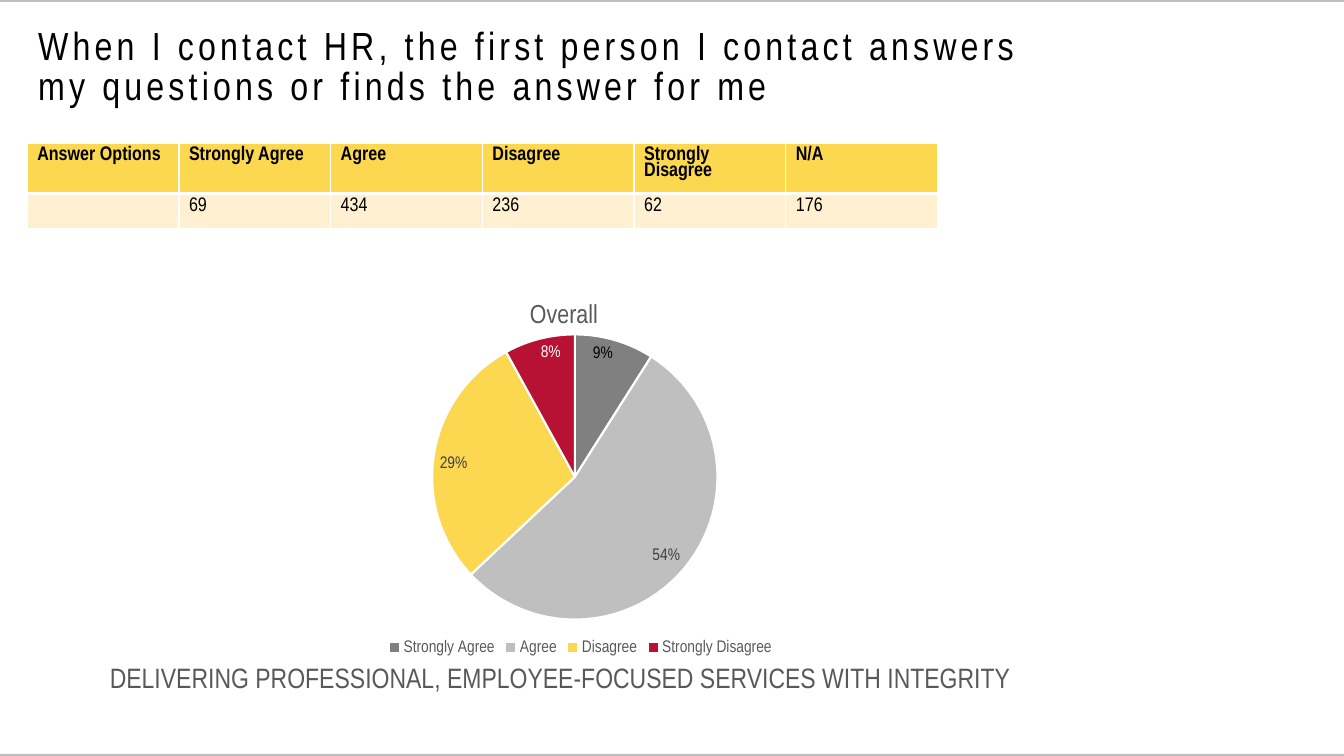
from dataclasses import dataclass

from lxml import etree
from pptx import Presentation
from pptx.chart.data import CategoryChartData
from pptx.dml.color import RGBColor
from pptx.enum.chart import XL_CHART_TYPE, XL_LABEL_POSITION, XL_LEGEND_POSITION
from pptx.enum.shapes import MSO_SHAPE
from pptx.enum.text import MSO_ANCHOR
from pptx.oxml import parse_xml
from pptx.oxml.ns import nsdecls, qn
from pptx.util import Inches, Pt

PIE = XL_CHART_TYPE.PIE
IN_END = XL_LABEL_POSITION.INSIDE_END
BOTTOM = XL_LEGEND_POSITION.BOTTOM
RECT = MSO_SHAPE.RECTANGLE
TOP, MIDDLE = MSO_ANCHOR.TOP, MSO_ANCHOR.MIDDLE


@dataclass(frozen=True)
class Theme:
    face: str = "Arial Narrow"
    black: str = "000000"
    white: str = "FFFFFF"
    dark: str = "404040"
    text: str = "595959"
    gray: str = "808080"
    light: str = "BFBFBF"
    gold: str = "FCD750"
    cream: str = "FEF0D0"
    red: str = "B71234"
    title: float = 28
    foot: float = 20
    head: float = 18.6
    cell: float = 14
    label: float = 12


@dataclass(frozen=True)
class Box:
    left: float
    top: float
    width: float
    height: float

    def emu(self):
        return [Inches(v) for v in (self.left, self.top, self.width, self.height)]


@dataclass(frozen=True)
class Slice:
    name: str
    share: int
    fill: str
    ink: str = ""


THEME = Theme()
BARS = [Box(0, 0, 13.33, 0.02), Box(0, 7.48, 13.33, 0.02)]
ROWS = [
    ["Answer Options", "Strongly Agree", "Agree", "Disagree", "Strongly Disagree", "N/A"],
    ["", "69", "434", "236", "62", "176"],
]
HEIGHTS = [0.5, 0.35]
SLICES = [
    Slice("Strongly Agree", 9, THEME.gray, THEME.black),
    Slice("Agree", 54, THEME.light),
    Slice("Disagree", 29, THEME.gold),
    Slice("Strongly Disagree", 8, THEME.red, THEME.white),
]


def paint(fill, color: str) -> None:
    fill.solid()
    fill.fore_color.rgb = RGBColor.from_string(color)


def style(font, size: float, color: str, bold: bool = False) -> None:
    font.name, font.size, font.bold = THEME.face, Pt(size), bold
    font.color.rgb = RGBColor.from_string(color)


def write(frame, text: str, *, size: float, color: str, bold: bool = False,
          lead: float = 1, gap: float = 0, anchor=None) -> None:
    """Fill a text frame; gap is the letter spacing in points."""
    frame.word_wrap = True
    if anchor is not None:
        frame.vertical_anchor = anchor
    para = frame.paragraphs[0]
    para.line_spacing = lead
    style(para.font, size, color, bold)
    if text:
        run = para.add_run()
        run.text = text
        style(run.font, size, color, bold)
        if gap:
            run.font._element.set("spc", str(int(gap * 100)))


def edge(cell, side: str, width: float) -> None:
    """Add one white border; call before the cell's fill is set."""
    props = cell._tc.get_or_add_tcPr()
    line = etree.SubElement(props, qn(f"a:ln{side}"), w=str(Pt(width)))
    fill = etree.SubElement(line, qn("a:solidFill"))
    etree.SubElement(fill, qn("a:srgbClr"), val=THEME.white)


def add_bar(slide, box: Box) -> None:
    bar = slide.shapes.add_shape(RECT, *box.emu())
    bar.shadow.inherit = False
    paint(bar.fill, THEME.light)
    bar.line.fill.background()


def add_grid(slide, box: Box) -> None:
    grid = slide.shapes.add_table(len(ROWS), len(ROWS[0]), *box.emu()).table
    for col in grid.columns:
        col.width = Inches(box.width / len(ROWS[0]))
    for r, row in enumerate(ROWS):
        grid.rows[r].height = Inches(HEIGHTS[r])
        head = r == 0
        for c, text in enumerate(row):
            cell = grid.cell(r, c)
            for side in "LRTB":
                thick = side == ("B" if head else "T")
                edge(cell, side, 3 if thick else 1)
            paint(cell.fill, THEME.gold if head else THEME.cream)
            write(cell.text_frame, text, size=THEME.cell, color=THEME.black,
                  bold=head, lead=0.85)


def layout(x: float, y: float, size: tuple[float, float] | None = None):
    """Manual chart layout in fractions of the chart; size marks an inner plot."""
    parts = [("xMode", "edge"), ("yMode", "edge"), ("x", x), ("y", y)]
    if size:
        parts = [("layoutTarget", "inner"), *parts, ("w", size[0]), ("h", size[1])]
    body = "".join(f'<c:{tag} val="{val}"/>' for tag, val in parts)
    return parse_xml(f"<c:layout {nsdecls('c')}><c:manualLayout>{body}"
                     "</c:manualLayout></c:layout>")


def place(node, spot, after: str = "") -> None:
    """Replace a layout, putting the new one first or after the named child."""
    for old in node.findall(qn("c:layout")):
        node.remove(old)
    if after:
        node.find(qn(after)).addnext(spot)
    else:
        node.insert(0, spot)


def add_pie(slide, box: Box) -> None:
    data = CategoryChartData()
    data.categories = [s.name for s in SLICES]
    data.add_series("Series 1", [s.share for s in SLICES])
    chart = slide.shapes.add_chart(PIE, *box.emu(), data).chart
    style(chart.font, 10, THEME.black)

    chart.has_title = True
    title = chart.chart_title
    write(title.text_frame, "Overall", size=THEME.head, color=THEME.text)
    title.include_in_layout = False
    place(title._element, layout(0.42, 0.02), "c:tx")

    chart.has_legend = True
    chart.legend.position = BOTTOM
    chart.legend.include_in_layout = False
    style(chart.legend.font, THEME.label, THEME.text)

    plot = chart.plots[0]
    plot.vary_by_categories = True
    area = plot._element.getparent()
    place(area, layout(0.126, 0.122, (0.731, 0.771)))

    series = plot.series[0]
    labels = series.data_labels
    labels.show_percentage, labels.show_value = True, False
    labels.number_format, labels.number_format_is_linked = "0%", False
    labels.position = IN_END
    style(labels.font, THEME.label, THEME.dark)
    for i, part in enumerate(SLICES):
        point = series.points[i]
        paint(point.format.fill, part.fill)
        paint(point.format.line.fill, THEME.white)
        point.format.line.width = Pt(1.5)
        if part.ink:
            style(point.data_label.font, THEME.label, part.ink)
            point.data_label.position = IN_END
    for label in series._element.iter(qn("c:dLbl")):
        label.find(qn("c:showVal")).set("val", "0")
        label.find(qn("c:showPercent")).set("val", "1")


def main() -> None:
    deck = Presentation()
    deck.slide_width, deck.slide_height = Inches(13.33), Inches(7.5)
    slide = deck.slides.add_slide(deck.slide_layouts[6])
    for bar in BARS:
        add_bar(slide, bar)
    title = slide.shapes.add_textbox(*Box(0.28, 0.15, 10.24, 1.05).emu())
    write(title.text_frame,
          "When I contact HR, the first person I contact answers my questions "
          "or finds the answer for me",
          size=THEME.title, color=THEME.black, lead=0.85, gap=3, anchor=MIDDLE)
    add_pie(slide, Box(2.32, 2.87, 6.88, 3.67))
    add_grid(slide, Box(0.27, 1.42, 9.03, 0.85))
    foot = slide.shapes.add_textbox(*Box(0.99, 6.54, 9.59, 0.73).emu())
    write(foot.text_frame,
          "DELIVERING PROFESSIONAL, EMPLOYEE-FOCUSED SERVICES WITH INTEGRITY",
          size=THEME.foot, color=THEME.text, lead=0.9, anchor=TOP)
    deck.save("out.pptx")


if __name__ == "__main__":
    main()
